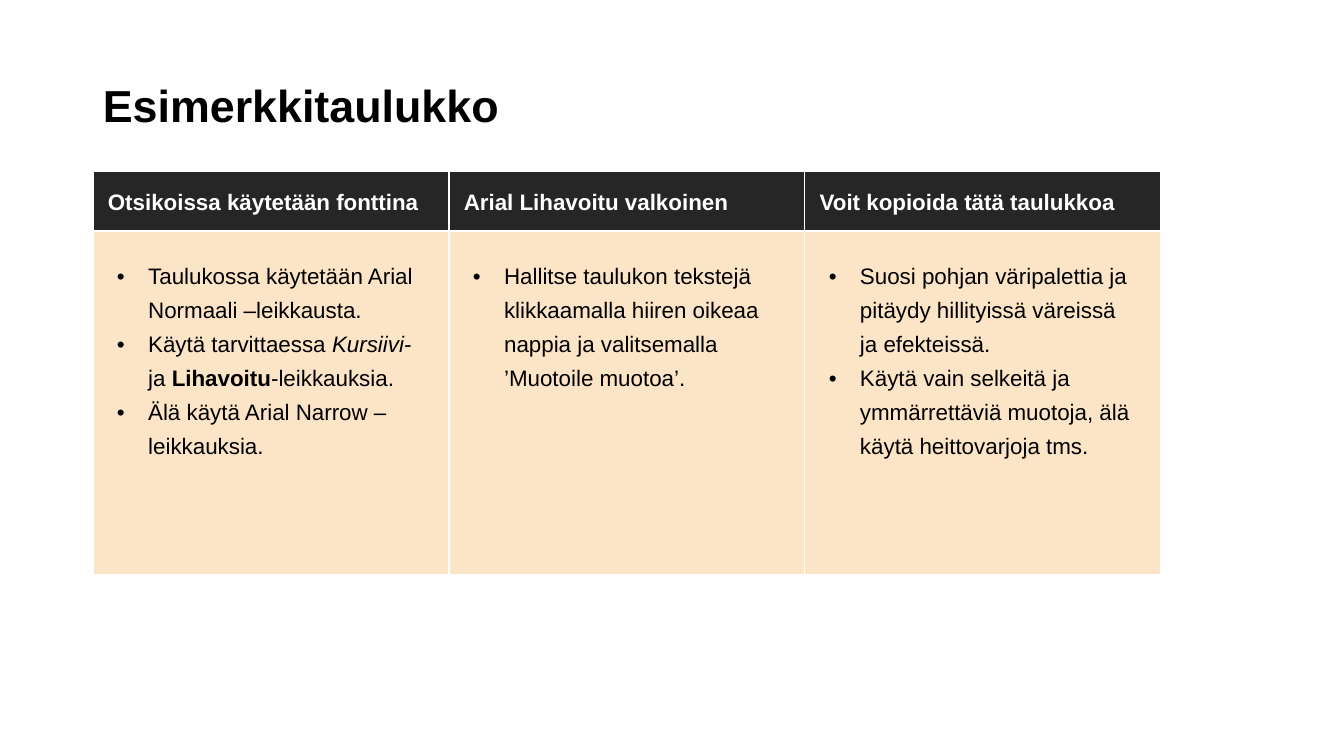
"""Build the slide with the three-column example table."""
from dataclasses import dataclass

from lxml.etree import SubElement
from pptx import Presentation
from pptx.dml.color import RGBColor as RGB
from pptx.enum.text import MSO_ANCHOR as Anchor, PP_ALIGN as Align
from pptx.oxml.ns import qn
from pptx.util import Inches, Pt

TITLE = "Esimerkkitaulukko"
HEADS = [
    "Otsikoissa käytetään fonttina",
    "Arial Lihavoitu valkoinen",
    "Voit kopioida tätä taulukkoa",
]
LISTS = [
    [
        [("Taulukossa käytetään Arial Normaali –leikkausta.", "")],
        [
            ("Käytä tarvittaessa ", ""),
            ("Kursiivi-", "italic"),
            (" ja ", ""),
            ("Lihavoitu", "bold"),
            ("-leikkauksia.", ""),
        ],
        [("Älä käytä Arial Narrow –leikkauksia.", "")],
    ],
    [
        [("Hallitse taulukon tekstejä klikkaamalla hiiren oikeaa nappia "
          "ja valitsemalla ’Muotoile muotoa’.", "")],
    ],
    [
        [("Suosi pohjan väripalettia ja pitäydy hillityissä väreissä "
          "ja efekteissä.", "")],
        [("Käytä vain selkeitä ja ymmärrettäviä muotoja, älä käytä "
          "heittovarjoja tms.", "")],
    ],
]


@dataclass(frozen=True)
class Theme:
    """Hold the colours, font and type sizes."""
    font: str = "Arial"
    ink: str = "000000"
    white: str = "FFFFFF"
    dark: str = "262626"
    sand: str = "FCE4C7"
    title: int = 32
    text: int = 16
    rule: float = 1.5


LOOK = Theme()
LEFT, TOP = Inches(0.92), Inches(1.7)
COL, ROWS = Inches(3.53), (Inches(0.59), Inches(3.41))


def style(para, size, color, bold, space):
    """Set the font and line spacing of a paragraph."""
    para.line_spacing = space
    font = para.font
    font.name, font.size, font.bold = LOOK.font, Pt(size), bold
    font.color.rgb = RGB.from_string(color)


def bullet(para):
    """Give a paragraph a hanging bullet."""
    props = para._p.get_or_add_pPr()
    props.set("marL", str(Inches(0.31)))
    props.set("indent", str(-Inches(0.31)))
    tint = SubElement(props, qn("a:buClr"))
    SubElement(tint, qn("a:srgbClr"), val=LOOK.ink)
    SubElement(props, qn("a:buFont"), typeface=LOOK.font)
    SubElement(props, qn("a:buChar"), char="•")


def frame(cell, fill, inset, anchor):
    """Set the borders, fill and margins of a cell."""
    props = cell._tc.get_or_add_tcPr()
    for side in "LRTB":
        line = SubElement(props, qn(f"a:ln{side}"), w=str(Pt(LOOK.rule)))
        solid = SubElement(line, qn("a:solidFill"))
        SubElement(solid, qn("a:srgbClr"), val=LOOK.white)
    cell.fill.solid()
    cell.fill.fore_color.rgb = RGB.from_string(fill)
    cell.margin_left = cell.margin_right = Inches(inset)
    cell.margin_top = cell.margin_bottom = Inches(inset)
    cell.vertical_anchor = anchor


def add_title(slide):
    """Place and format the title."""
    title = slide.shapes.title
    title.left, title.top = LEFT, Inches(0)
    title.width, title.height = Inches(11.5), Inches(1.36)
    box = title.text_frame
    box.text = TITLE
    box.vertical_anchor = Anchor.BOTTOM
    para = box.paragraphs[0]
    para.alignment = Align.LEFT
    style(para, LOOK.title, LOOK.ink, True, 0.9)


def add_grid(slide):
    """Add the table with its heads and lists."""
    count = len(HEADS)
    grid = slide.shapes.add_table(
        len(ROWS), count, LEFT, TOP, COL * count, sum(ROWS)).table
    for row, height in zip(grid.rows, ROWS):
        row.height = height
    for col, (head, items) in enumerate(zip(HEADS, LISTS)):
        grid.columns[col].width = COL
        cell = grid.cell(0, col)
        frame(cell, LOOK.dark, 0.15, Anchor.MIDDLE)
        cell.text = head
        style(cell.text_frame.paragraphs[0], LOOK.text, LOOK.white, True, 1.1)
        cell = grid.cell(1, col)
        frame(cell, LOOK.sand, 0.24, Anchor.TOP)
        box = cell.text_frame
        for num, item in enumerate(items):
            para = box.add_paragraph() if num else box.paragraphs[0]
            bullet(para)
            style(para, LOOK.text, LOOK.ink, False, 1.37)
            for text, face in item:
                run = para.add_run()
                run.text = text
                if face:
                    setattr(run.font, face, True)


def main():
    """Make and save the deck."""
    deck = Presentation()
    deck.slide_width, deck.slide_height = Inches(13.33), Inches(7.5)
    slide = deck.slides.add_slide(deck.slide_layouts[5])
    add_title(slide)
    add_grid(slide)
    deck.save("out.pptx")


if __name__ == "__main__":
    main()
